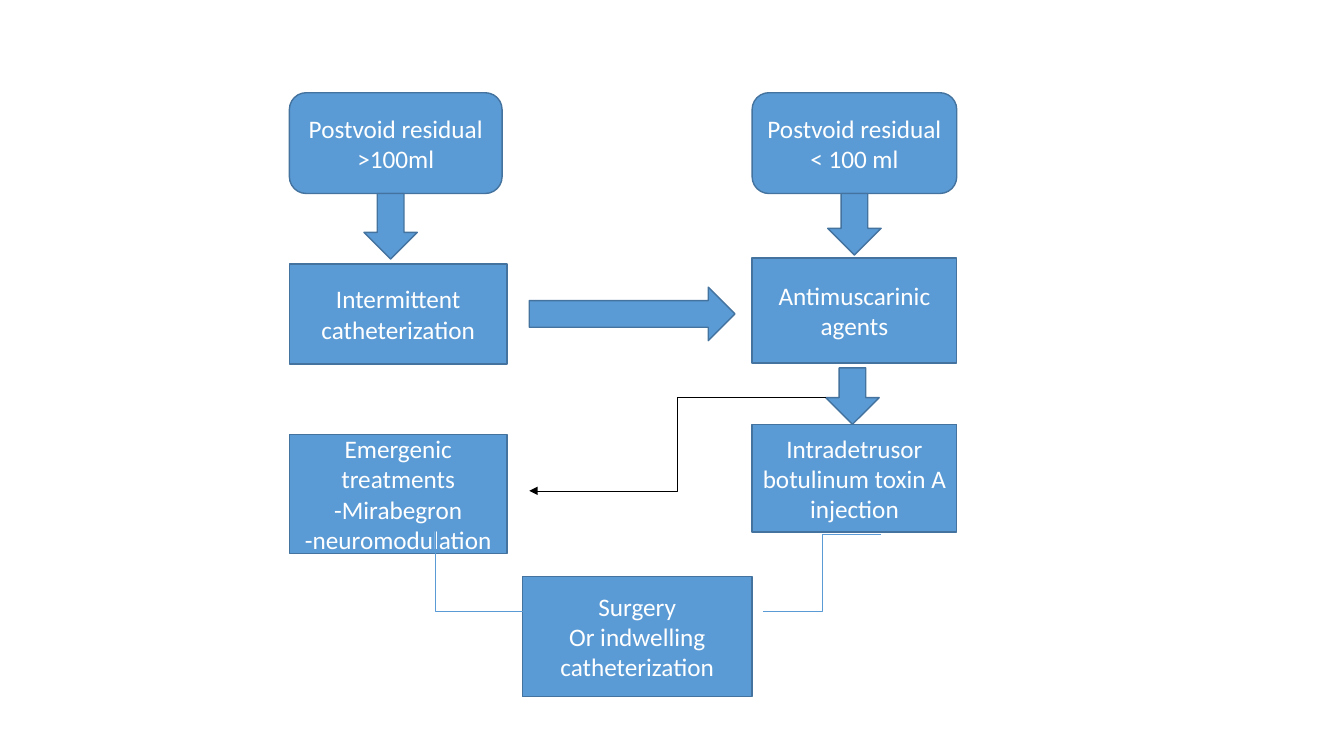
from dataclasses import dataclass

from lxml.etree import SubElement
from pptx import Presentation
from pptx.dml.color import RGBColor
from pptx.enum.shapes import MSO_CONNECTOR, MSO_SHAPE
from pptx.enum.text import MSO_ANCHOR, PP_ALIGN
from pptx.oxml.ns import qn
from pptx.util import Inches, Pt


@dataclass(frozen=True)
class Theme:
    fill: RGBColor = RGBColor(0x5B, 0x9B, 0xD5)
    outline: RGBColor = RGBColor(0x43, 0x73, 0x9E)
    text: RGBColor = RGBColor(0xFF, 0xFF, 0xFF)
    arrow: RGBColor = RGBColor(0, 0, 0)
    font: str = "Calibri"
    size: Pt = Pt(18)
    outline_width: Pt = Pt(1)
    link_width: Pt = Pt(0.5)


theme = Theme()
prs = Presentation()
prs.slide_width, prs.slide_height = Inches(13.33), Inches(7.5)
slide = prs.slides.add_slide(prs.slide_layouts[6])


def add_block(kind, left, top, width, height):
    s = slide.shapes.add_shape(kind, Inches(left), Inches(top), Inches(width), Inches(height))
    s.shadow.inherit = False
    s.fill.solid()
    s.fill.fore_color.rgb = theme.fill
    s.line.color.rgb = theme.outline
    s.line.width = theme.outline_width
    return s


LEFT, RIGHT = 2.87, 7.46
LEFT_W, RIGHT_W = 2.16, 2.03
ROUNDED, PROCESS = MSO_SHAPE.ROUNDED_RECTANGLE, MSO_SHAPE.FLOWCHART_PROCESS

steps = [
    (ROUNDED, LEFT, 0.92, 2.11, 1, ["Postvoid residual >100ml"]),
    (ROUNDED, RIGHT, 0.92, RIGHT_W, 1, ["Postvoid residual < 100 ml"]),
    (MSO_SHAPE.ACTION_BUTTON_CUSTOM, RIGHT, 2.56, RIGHT_W, 1.04, ["Antimuscarinic agents"]),
    (PROCESS, LEFT, 2.62, LEFT_W, 0.99, ["Intermittent catheterization"]),
    (PROCESS, RIGHT, 4.21, RIGHT_W, 1.07, ["Intradetrusor botulinum toxin A injection"]),
    (PROCESS, LEFT, 4.31, LEFT_W, 1.18,
     ["Emergenic treatments", "-Mirabegron", "-neuromodulation"]),
    (PROCESS, 5.18, 5.72, 2.28, 1.19, ["Surgery", "Or indwelling catheterization"]),
]
for *box, lines in steps:
    tf = add_block(*box).text_frame
    tf.word_wrap = True
    tf.vertical_anchor = MSO_ANCHOR.MIDDLE
    tf.text = "\n".join(lines)
    for p in tf.paragraphs:
        p.alignment = PP_ALIGN.CENTER
        for r in p.runs:
            r.font.name, r.font.size = theme.font, theme.size
            r.font.color.rgb = theme.text

block_arrows = [
    (MSO_SHAPE.DOWN_ARROW, 8.21, 1.92, 0.53, 0.61),
    (MSO_SHAPE.DOWN_ARROW, 8.19, 3.65, 0.53, 0.56),
    (MSO_SHAPE.DOWN_ARROW, 3.61, 1.92, 0.53, 0.65),
    (MSO_SHAPE.RIGHT_ARROW, 5.25, 2.85, 2.04, 0.53),
]
for arrow in block_arrows:
    add_block(*arrow)

elbows = [
    ((8.19, 3.94), (5.25, 4.87), theme.arrow, True),
    ((3.45, 4.93), (5.19, 6.07), theme.fill, False),
    ((8.74, 5.3), (7.57, 6.07), theme.fill, False),
]
for start, end, color, has_head in elbows:
    c = slide.shapes.add_connector(MSO_CONNECTOR.ELBOW, *map(Inches, start + end))
    c.line.color.rgb = color
    c.line.width = theme.link_width
    if has_head:
        SubElement(c.line._get_or_add_ln(), qn("a:tailEnd"), type="triangle")
    SubElement(c._element.spPr, qn("a:effectLst"))

prs.save("out.pptx")
